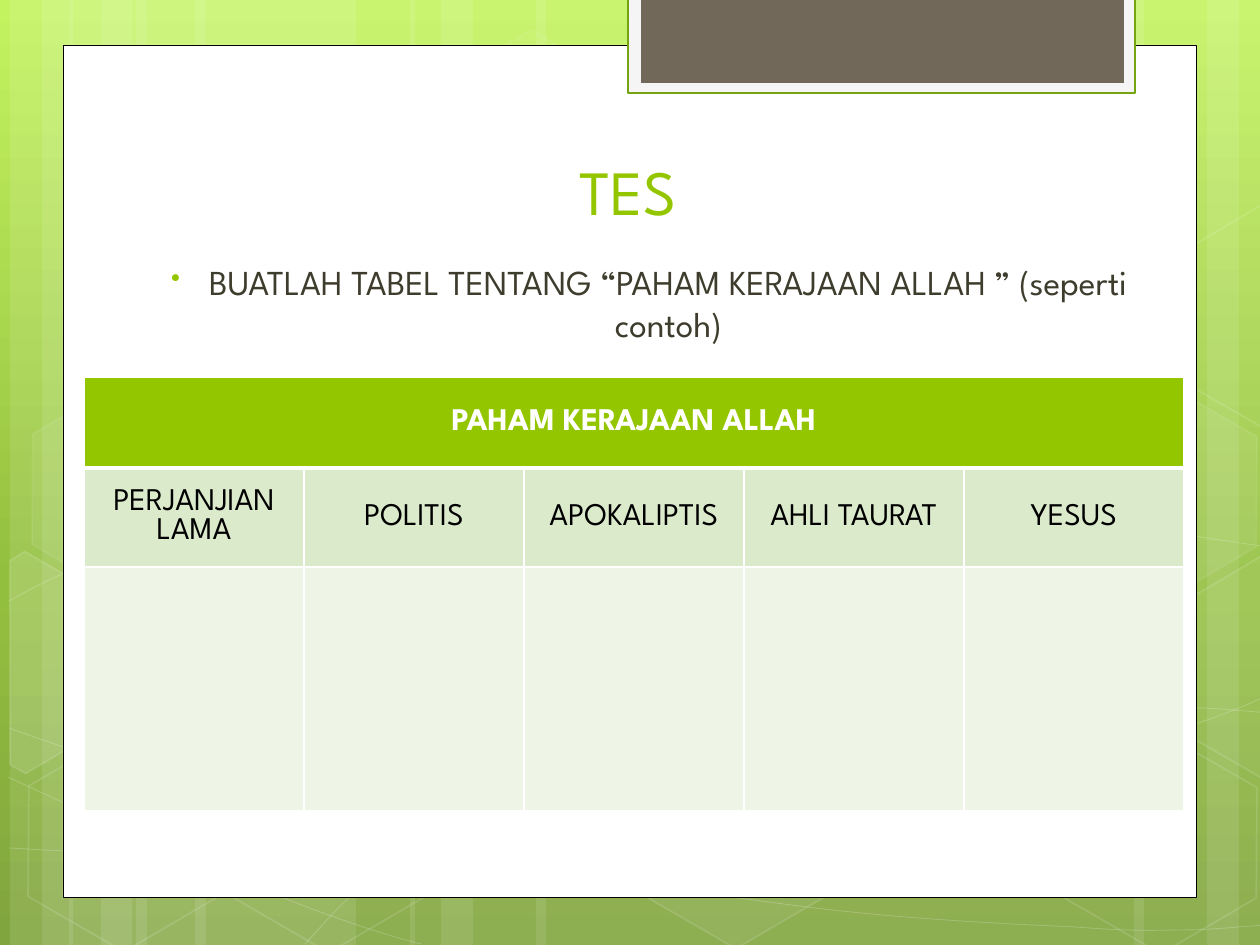
from copy import deepcopy
from dataclasses import dataclass

from lxml import etree
from pptx import Presentation
from pptx.dml.color import RGBColor
from pptx.enum.shapes import MSO_SHAPE
from pptx.enum.text import MSO_ANCHOR, PP_ALIGN
from pptx.oxml.ns import qn
from pptx.util import Emu, Pt

RECT, HEX = MSO_SHAPE.RECTANGLE, MSO_SHAPE.HEXAGON
CENTER = PP_ALIGN.CENTER
MIDDLE, BOTTOM, TOP = MSO_ANCHOR.MIDDLE, MSO_ANCHOR.BOTTOM, MSO_ANCHOR.TOP
SCALE = 914400 / 126  # EMU per px


@dataclass(frozen=True)
class Theme:
    font: str = "League Spartan"
    white: str = "FFFFFF"
    black: str = "000000"
    lime: str = "94C600"
    edge: str = "74A510"
    ink: str = "3E3D2D"
    frame: str = "F5F5F5"
    tab: str = "71685A"
    head: str = "DCEACC"
    blank: str = "EEF5E7"
    sky: tuple = ((0, "C3F35F"), (0.62, "93BF3F"), (1, "81A53E"))
    title: int = 36
    body: int = 20
    cell: int = 18


def px(n):
    return Emu(round(n * SCALE))


def rgb(code):
    return RGBColor.from_string(code)


def fade(fill, pct):
    """Paint a fill white at the given opacity."""
    fill.solid()
    fill.fore_color.rgb = rgb(Theme.white)
    color = fill._xPr.find(".//" + qn("a:srgbClr"))
    etree.SubElement(color, qn("a:alpha")).set("val", str(pct * 1000))


class Deck:
    def __init__(self, theme):
        self.th = theme
        self.prs = Presentation()
        self.prs.slide_width, self.prs.slide_height = px(1260), px(945)
        self.slide = self.prs.slides.add_slide(self.prs.slide_layouts[5])
        self.shapes = self.slide.shapes

    def sky(self):
        fill = self.slide.background.fill
        fill.gradient()
        fill.gradient_angle = 270
        stops = self.slide._element.find(".//" + qn("a:gsLst"))
        stops.append(deepcopy(stops[0]))
        for stop, (pos, code) in zip(fill.gradient_stops, self.th.sky):
            stop.position, stop.color.rgb = pos, rgb(code)

    def box(self, x, y, w, h, fill, line=None, width=1.0):
        shp = self.shapes.add_shape(RECT, px(x), px(y), px(w), px(h))
        shp.shadow.inherit = False
        shp.fill.solid()
        shp.fill.fore_color.rgb = rgb(fill)
        if line:
            shp.line.color.rgb = rgb(line)
            shp.line.width = Pt(width)
        else:
            shp.line.fill.background()
        return shp

    def ghost(self, shp, fill, line, width=1.0):
        shp.shadow.inherit = False
        if fill:
            fade(shp.fill, fill)
        else:
            shp.fill.background()
        fade(shp.line.fill, line)
        shp.line.width = Pt(width)

    def band(self, x, w):
        fade(self.box(x, 0, w, 945, self.th.white).fill, 10)

    def hexa(self, x, y, fill, line):
        shp = self.shapes.add_shape(HEX, px(x), px(y), px(220), px(192))
        shp.adjustments[0], shp.adjustments[1] = 0.285, 1.155
        shp.rotation = 30
        self.ghost(shp, fill, line)

    def free(self, pts, close):
        first, *rest = [(px(x), px(y)) for x, y in pts]
        pen = self.shapes.build_freeform(*first)
        pen.add_line_segments(rest, close=close)
        return pen.convert_to_shape()

    def chip(self, x, y, pts, fill):
        """A hexagon cut off by the slide's edge."""
        shp = self.free([(x + a, y + b) for a, b in pts], True)
        shp.rotation = 30
        self.ghost(shp, fill, 12)

    def wave(self, start, curves):
        shp = self.free([start] + [pt for curve in curves for pt in curve], False)
        legs = list(shp._element.iter(qn("a:lnTo")))
        for i in range(0, len(legs), 3):  # three points make one cubic curve
            cubic = etree.Element(qn("a:cubicBezTo"))
            legs[i].addprevious(cubic)
            for leg in legs[i:i + 3]:
                cubic.append(leg[0])
                leg.getparent().remove(leg)
        self.ghost(shp, 0, 20, 0.5)

    def text(self, frame, words, size, color, anchor, bold=False):
        frame.text = words
        frame.word_wrap = True
        frame.vertical_anchor = anchor
        par = frame.paragraphs[0]
        par.alignment = CENTER
        for run in par.runs:
            font = run.font
            font.name, font.size, font.bold = self.th.font, Pt(size), bold
            font.color.rgb = rgb(color)
        return par

    def title(self, x, y, w, h, words):
        shp = self.shapes.title
        self.shapes._spTree.append(shp._element)  # above the panel
        shp.left, shp.top, shp.width, shp.height = map(px, (x, y, w, h))
        self.text(shp.text_frame, words, self.th.title, self.th.lime, BOTTOM)

    def bullet(self, x, y, w, h, words):
        shp = self.shapes.add_textbox(px(x), px(y), px(w), px(h))
        par = self.text(shp.text_frame, words, self.th.body, self.th.ink, TOP)
        ppr = par._p.get_or_add_pPr()
        ppr.set("marL", str(px(48)))
        ppr.set("indent", str(px(-38)))
        color = etree.SubElement(ppr, qn("a:buClr"))
        etree.SubElement(color, qn("a:srgbClr")).set("val", self.th.lime)
        etree.SubElement(ppr, qn("a:buSzPct")).set("val", "76000")
        etree.SubElement(ppr, qn("a:buChar")).set("char", "•")

    def border(self, cell, **widths):
        tcpr = cell._tc.get_or_add_tcPr()
        for i, side in enumerate("LRTB"):
            line = etree.Element(qn("a:ln" + side), w=str(Pt(widths.get(side, 1))))
            fill = etree.SubElement(line, qn("a:solidFill"))
            etree.SubElement(fill, qn("a:srgbClr")).set("val", self.th.white)
            tcpr.insert(i, line)

    def table(self, x, y, wide, highs, head, names):
        th, n = self.th, len(names)
        tab = self.shapes.add_table(len(highs), n, px(x), px(y),
                                    px(wide * n), px(sum(highs))).table
        for col in tab.columns:
            col.width = px(wide)
        for row, high in zip(tab.rows, highs):
            row.height = px(high)
        tab.cell(0, 0).merge(tab.cell(0, n - 1))
        rows = ([head], names, [])
        for r, fill in enumerate((th.lime, th.head, th.blank)):
            for c in range(n):
                cell = tab.cell(r, c)
                cell.fill.solid()
                cell.fill.fore_color.rgb = rgb(fill)
                self.border(cell, **({"B": 3}, {"T": 3}, {})[r])
                if c < len(rows[r]):
                    self.text(cell.text_frame, rows[r][c], th.cell,
                              th.black if r else th.white, MIDDLE, r == 0)
                    cell.vertical_anchor = MIDDLE


BANDS = [(136, 220), (10, 63), (42, 105), (195, 220), (69, 63), (101, 105),
         (924, 220), (1207, 63), (1134, 105), (536, 388), (410, 63), (441, 105)]
WAVES = [
    ((9, 848), [((77, 852), (145, 856), (239, 854)), ((334, 853), (451, 850), (577, 838)),
                ((703, 825), (882, 801), (998, 777)), ((1113, 753), (1231, 716), (1269, 694))]),
    ((9, 601), [((45, 581), (82, 562), (152, 543)), ((224, 524), (326, 496), (437, 488)),
                ((549, 479), (685, 478), (824, 488)), ((963, 498), (1193, 537), (1269, 547))]),
    ((8, 777), [((159, 847), (311, 916), (421, 944))]),
    ((9, 728), [((48, 742), (88, 756), (161, 776)), ((234, 795), (344, 827), (450, 848)),
                ((554, 869), (687, 892), (791, 905)), ((896, 919), (1008, 924), (1075, 927)),
                ((1140, 932), (1158, 930), (1191, 930)), ((1223, 929), (1246, 926), (1269, 925))]),
    ((305, 944), [((328, 919), (350, 893), (381, 871)), ((411, 848), (454, 823), (489, 805)),
                  ((524, 788), (546, 780), (592, 767)), ((638, 755), (722, 737), (766, 728)),
                  ((811, 719), (818, 719), (857, 717)), ((896, 713), (958, 709), (1000, 708)),
                  ((1045, 707), (1116, 708), (1116, 708)), ((1144, 708), (1173, 708), (1201, 708)),
                  ((1223, 709), (1245, 711), (1256, 712)), ((1268, 713), (1264, 712), (1268, 713))]),
]
HEXES = [(421, 45, 4, 8), (626, 742, 6, 12), (14, 745, 0, 12), (18, 393, 7, 8),
         (219, 746, 0, 12), (949, 571, 10, 12), (1051, 747, 0, 12), (1051, 396, 7, 8)]
LEFT = [(0, 16), (8, 0), (119, 0), (174, 97), (120, 192), (102, 192)]
RIGHT = [(0, 96), (54, 0), (65, 0), (171, 182), (166, 192), (55, 192)]


def main():
    th = Theme()
    deck = Deck(th)

    # Backdrop: bands, waves and hexagons
    deck.sky()
    for x, w in BANDS:
        deck.band(x, w)
    for start, curves in WAVES:
        deck.wave(start, curves)
    for spot in HEXES:
        deck.hexa(*spot)
    deck.chip(-42, 578, LEFT, 10)
    deck.chip(1155, 559, RIGHT, 4)
    deck.chip(1155, 208, RIGHT, 0)

    # Panel and tab
    deck.box(63, 45, 1134, 853, th.white, th.black, 0.5)
    deck.box(628, -3, 507, 96, th.frame, th.edge, 1.25)
    deck.box(641, -3, 483, 86, th.tab)

    # Words and table
    deck.title(144, 141, 968, 93, "TES")
    deck.bullet(104, 254, 1081, 122,
                "BUATLAH TABEL TENTANG “PAHAM KERAJAAN ALLAH ” (seperti contoh)")
    deck.table(84, 377, 220, (91, 99, 244), "PAHAM KERAJAAN ALLAH",
               ["PERJANJIAN LAMA", "POLITIS", "APOKALIPTIS", "AHLI TAURAT", "YESUS"])
    deck.prs.save("out.pptx")


if __name__ == "__main__":
    main()
